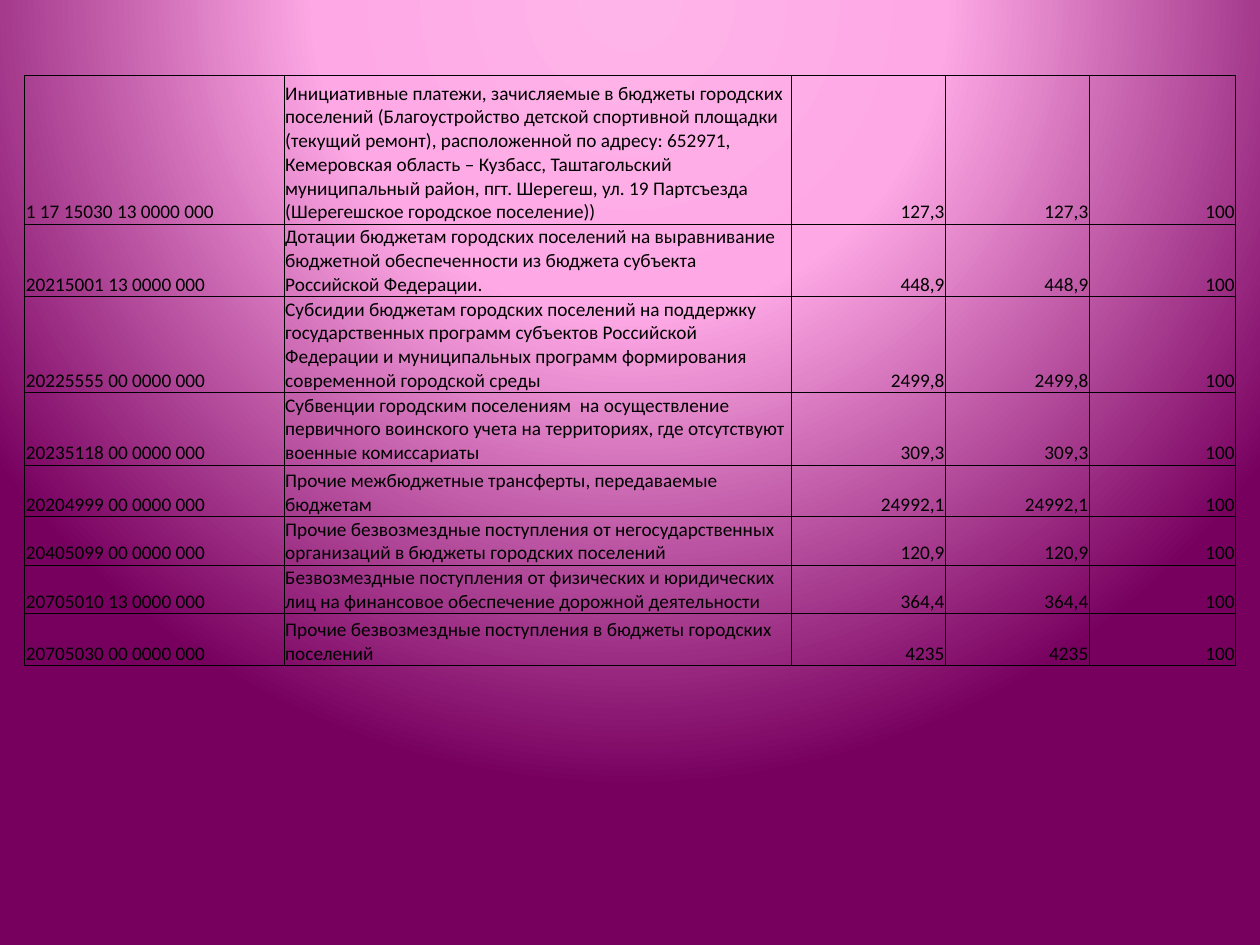
import pptx
import pptx.util
import pptx.dml.color
import pptx.enum.text
import pptx.oxml
import pptx.oxml.ns

Cm = pptx.util.Cm
RGBColor = pptx.dml.color.RGBColor
ALIGN = pptx.enum.text.PP_ALIGN

BLACK = RGBColor(0x00, 0x00, 0x00)
PALE_PINK = RGBColor(0xFF, 0xB4, 0xE9)
PINK = RGBColor(0xFE, 0xA8, 0xE5)
PURPLE = RGBColor(0x77, 0x00, 0x5F)

GRADIENT_STOPS = [(0, PALE_PINK), (40, PINK), (100, PURPLE)]
COLUMN_WIDTHS = [5.23, 10.23, 3.1, 2.9, 2.95]
ROW_HEIGHTS = [3, 1.42, 1.9, 1.45, 1.04, 0.79, 0.81, 1.04]
INCOME_ROWS = [
    ("1 17 15030 13 0000 000",
     "Инициативные платежи, зачисляемые в бюджеты городских поселений "
     "(Благоустройство детской спортивной площадки (текущий ремонт), "
     "расположенной по адресу: 652971, Кемеровская область – Кузбасс, "
     "Таштагольский муниципальный район, пгт. Шерегеш, ул. 19 Партсъезда "
     "(Шерегешское городское поселение))",
     "127,3", "127,3", "100"),
    ("20215001 13 0000 000",
     "Дотации бюджетам городских поселений на выравнивание бюджетной "
     "обеспеченности из бюджета субъекта Российской Федерации.",
     "448,9", "448,9", "100"),
    ("20225555 00 0000 000",
     "Субсидии бюджетам городских поселений на поддержку государственных "
     "программ субъектов Российской Федерации и муниципальных программ "
     "формирования современной городской среды",
     "2499,8", "2499,8", "100"),
    ("20235118 00 0000 000",
     "Субвенции городским поселениям  на осуществление первичного воинского "
     "учета на территориях, где отсутствуют военные комиссариаты",
     "309,3", "309,3", "100"),
    ("20204999 00 0000 000",
     "Прочие межбюджетные трансферты, передаваемые бюджетам",
     "24992,1", "24992,1", "100"),
    ("20405099 00 0000 000",
     "Прочие безвозмездные поступления от негосударственных организаций "
     "в бюджеты городских поселений",
     "120,9", "120,9", "100"),
    ("20705010 13 0000 000",
     "Безвозмездные поступления от физических и юридических лиц "
     "на финансовое обеспечение дорожной деятельности",
     "364,4", "364,4", "100"),
    ("20705030 00 0000 000",
     "Прочие безвозмездные поступления в бюджеты городских поселений",
     "4235", "4235", "100"),
]


def set_background(slide):
    slide.background.fill.gradient()
    gradient = slide.element.find(".//" + pptx.oxml.ns.qn("a:gradFill"))
    stops = "".join(
        f'<a:gs pos="{position * 1000}"><a:srgbClr val="{color}"/></a:gs>'
        for position, color in GRADIENT_STOPS
    )
    radial = pptx.oxml.parse_xml(
        f'<a:gradFill {pptx.oxml.ns.nsdecls("a")} rotWithShape="1">'
        f'<a:gsLst>{stops}</a:gsLst><a:path path="circle">'
        '<a:fillToRect l="50000" t="-80000" r="50000" b="180000"/>'
        '</a:path></a:gradFill>'
    )
    gradient.getparent().replace(gradient, radial)


def set_borders(cell):
    properties = cell._tc.get_or_add_tcPr()
    for index, side in enumerate(["lnL", "lnR", "lnT", "lnB"]):
        properties.insert(index, pptx.oxml.parse_xml(
            f'<a:{side} {pptx.oxml.ns.nsdecls("a")} w="{pptx.util.Pt(0.5)}">'
            f'<a:solidFill><a:srgbClr val="{BLACK}"/></a:solidFill></a:{side}>'
        ))


def fill_cell(cell, text, alignment):
    cell.text = text
    cell.fill.background()
    cell.vertical_anchor = pptx.enum.text.MSO_ANCHOR.BOTTOM
    cell.margin_left = cell.margin_right = cell.margin_top = Cm(0.02)
    cell.margin_bottom = 0
    paragraph = cell.text_frame.paragraphs[0]
    paragraph.alignment = alignment
    paragraph.font.name = "Calibri"
    paragraph.font.size = pptx.util.Pt(11)
    paragraph.font.color.rgb = BLACK
    set_borders(cell)


def add_income_table(slide):
    table = slide.shapes.add_table(
        len(INCOME_ROWS), len(COLUMN_WIDTHS), Cm(0.5), Cm(1.52),
        Cm(sum(COLUMN_WIDTHS)), Cm(sum(ROW_HEIGHTS)),
    ).table
    table.first_row = table.horz_banding = False
    for column, width in zip(table.columns, COLUMN_WIDTHS):
        column.width = Cm(width)
    for row, height, texts in zip(table.rows, ROW_HEIGHTS, INCOME_ROWS):
        row.height = Cm(height)
        for index, (cell, text) in enumerate(zip(row.cells, texts)):
            fill_cell(cell, text, ALIGN.LEFT if index < 2 else ALIGN.RIGHT)


def main():
    presentation = pptx.Presentation()
    presentation.slide_width = Cm(25.4)
    presentation.slide_height = Cm(19.05)
    slide = presentation.slides.add_slide(presentation.slide_layouts[6])
    set_background(slide)
    add_income_table(slide)
    presentation.save("out.pptx")


if __name__ == "__main__":
    main()
